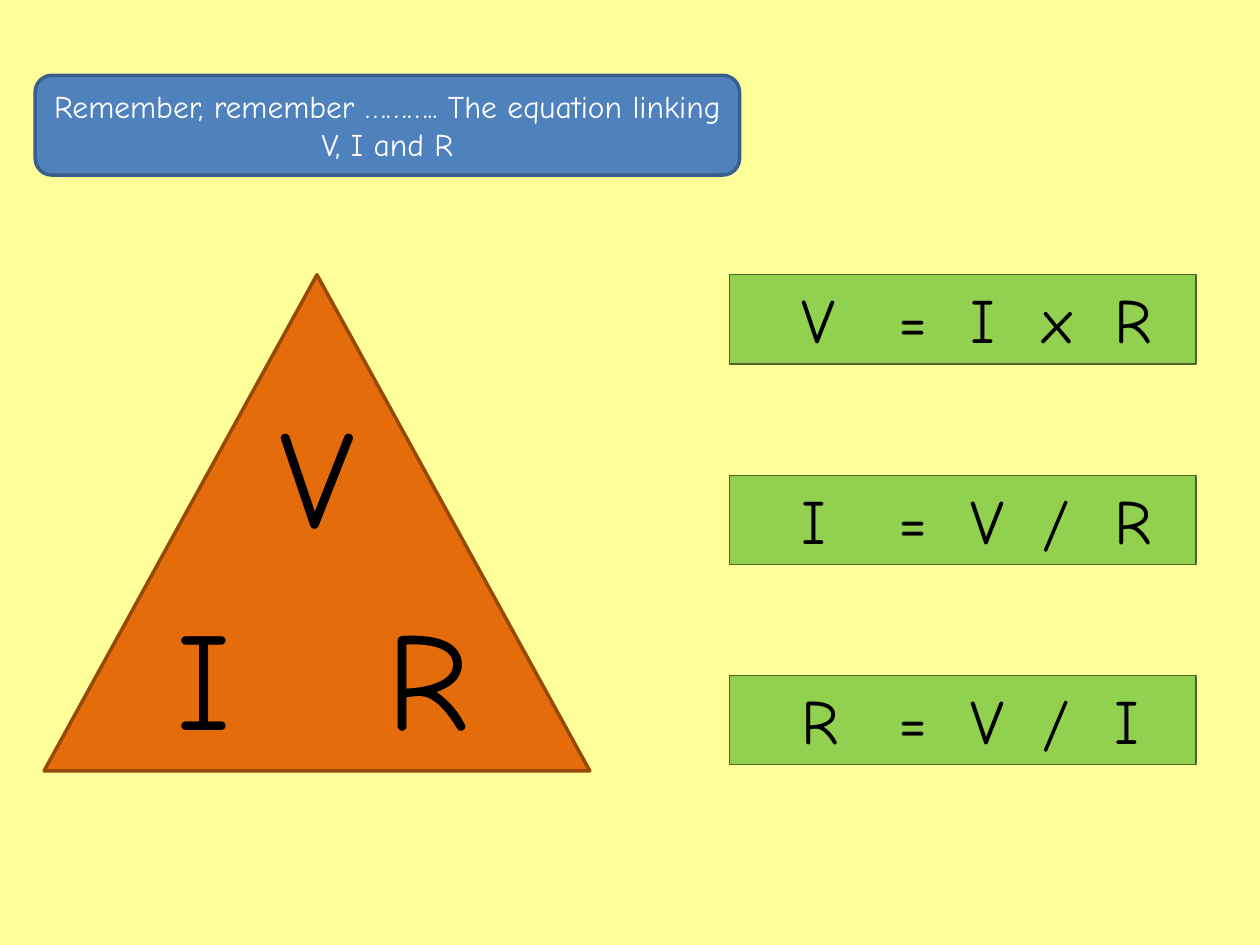
from dataclasses import dataclass

from lxml import etree
from pptx import Presentation
from pptx.dml.color import RGBColor
from pptx.enum.shapes import MSO_SHAPE
from pptx.enum.text import MSO_ANCHOR, MSO_AUTO_SIZE, PP_ALIGN
from pptx.oxml.ns import qn
from pptx.util import Cm, Pt

ROUND = MSO_SHAPE.ROUNDED_RECTANGLE
PEAK = MSO_SHAPE.ISOSCELES_TRIANGLE
RECT = MSO_SHAPE.RECTANGLE
TOP, MIDDLE = MSO_ANCHOR.TOP, MSO_ANCHOR.MIDDLE
FIXED, GROW = MSO_AUTO_SIZE.NONE, MSO_AUTO_SIZE.SHAPE_TO_FIT_TEXT
LEFT, CENTER = PP_ALIGN.LEFT, PP_ALIGN.CENTER


@dataclass(frozen=True)
class Theme:
    font: str = "Comic Neue"
    page: str = "FFFF99"
    ink: str = "000000"
    light: str = "FFFFFF"
    blue: str = "4F81BD"
    navy: str = "3A5F8C"
    orange: str = "E46C0A"
    brown: str = "984807"
    green: str = "92D050"
    moss: str = "4F6228"
    head: int = 18
    row: int = 36
    sign: int = 80
    thick: float = 2
    thin: float = 0.75


THEME = Theme()


def tint(code):
    return RGBColor.from_string(code)


def apply(item, values):
    for name, value in values.items():
        setattr(item, name, value)


def lengths(box):
    return [Cm(value) for value in box]


def panel(slide, kind, box, fill, edge, width):
    shape = slide.shapes.add_shape(kind, *lengths(box))
    shape.shadow.inherit = False
    shape.fill.solid()
    shape.fill.fore_color.rgb = tint(fill)
    shape.line.color.rgb = tint(edge)
    shape.line.width = Pt(width)
    return shape


def write(shape, text, size, color, align, frame):
    body = shape.text_frame
    body.text = text
    apply(body, {"word_wrap": True, **frame})
    para = body.paragraphs[0]
    para.alignment = align
    font = para.runs[0].font
    apply(font, {"name": THEME.font, "size": Pt(size), "bold": False})
    font.color.rgb = tint(color)
    return para


def banner(slide, box, text):
    panel(slide, ROUND, box, THEME.blue, THEME.navy, THEME.thick)
    title = slide.shapes.title
    apply(title, dict(zip(("left", "top", "width", "height"), lengths(box))))
    title.element.getparent().append(title.element)
    write(title, text, THEME.head, THEME.light, CENTER,
          {"vertical_anchor": MIDDLE, "auto_size": FIXED})


def pyramid(slide, box, signs):
    left, top = box[:2]
    panel(slide, PEAK, box, THEME.orange, THEME.brown, THEME.thick)
    for text, x, y in signs:
        area = (left + x, top + y, 2.69, 3.68)
        label = slide.shapes.add_textbox(*lengths(area))
        write(label, text, THEME.sign, THEME.ink, CENTER,
              {"vertical_anchor": TOP, "auto_size": GROW})


def set_tabs(para, first, step, count):
    stops = etree.SubElement(para._p.get_or_add_pPr(), qn("a:tabLst"))
    for index in range(count):
        place = Cm(first + index * step)
        etree.SubElement(stops, qn("a:tab"), pos=str(place), algn="l")


def formulas(slide, box, rows):
    left, top, width, height = box
    deep = 1.8
    step = (height - deep) / (len(rows) - 1)
    for index, row in enumerate(rows):
        area = (left, top + index * step, width, deep)
        card = panel(slide, RECT, area, THEME.green, THEME.moss, THEME.thin)
        parts = row.split()
        para = write(card, "\t".join(parts), THEME.row, THEME.ink, LEFT,
                     {"vertical_anchor": TOP, "auto_size": GROW,
                      "margin_left": Cm(1.45)})
        set_tabs(para, 1.95, 1.45, len(parts) - 1)


def main():
    deck = Presentation()
    deck.slide_width, deck.slide_height = Cm(25.4), Cm(19.05)
    slide = deck.slides.add_slide(deck.slide_layouts[5])
    back = slide.background.fill
    back.solid()
    back.fore_color.rgb = tint(THEME.page)
    banner(slide, (0.71, 1.52, 14.2, 2.01),
           "Remember, remember ……….. The equation linking V, I and R")
    pyramid(slide, (0.89, 5.54, 11, 10),
            (("V", 4.16, 2.16), ("I", 1.88, 6.25), ("R", 6.4, 6.25)))
    formulas(slide, (14.71, 5.54, 9.4, 9.88),
             ("V = I x R", "I = V / R", "R = V / I"))
    deck.save("out.pptx")


if __name__ == "__main__":
    main()
